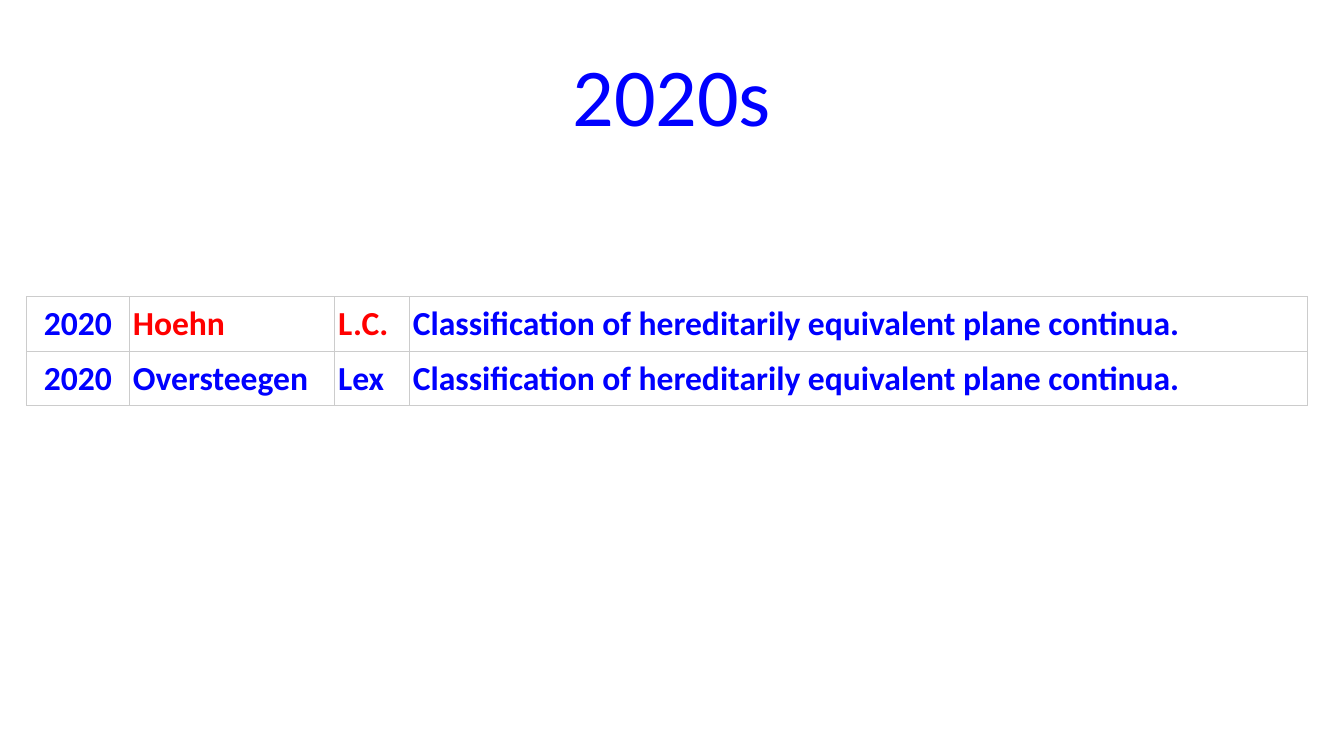
from lxml.etree import SubElement
from pptx import Presentation
from pptx.dml.color import RGBColor
from pptx.enum.text import MSO_ANCHOR as Anchor, PP_ALIGN as Align
from pptx.oxml.ns import qn
from pptx.util import Pt

BLUE = RGBColor(0x00, 0x00, 0xFF)
RED = RGBColor(0xFF, 0x00, 0x00)
BORDER = RGBColor(0xCC, 0xCC, 0xCC)
FONT = "Calibri"


def add_text(paragraph, text, size, color, bold, alignment):
    paragraph.alignment = alignment
    run = paragraph.add_run()
    run.text = text
    run.font.name = FONT
    run.font.size = Pt(size)
    run.font.bold = bold
    run.font.color.rgb = color


def add_borders(cell):
    properties = cell._tc.get_or_add_tcPr()
    for side in ("a:lnL", "a:lnR", "a:lnT", "a:lnB"):
        line = SubElement(properties, qn(side), w=str(Pt(0.6)))
        fill = SubElement(line, qn("a:solidFill"))
        SubElement(fill, qn("a:srgbClr"), val=str(BORDER))


presentation = Presentation()
presentation.slide_width = Pt(720)
presentation.slide_height = Pt(405)
slide = presentation.slides.add_slide(presentation.slide_layouts[5])

title = slide.shapes.title
title.left, title.top, title.width, title.height = Pt(36), Pt(16.25), Pt(648), Pt(67.5)
title.text_frame.vertical_anchor = Anchor.MIDDLE
add_text(title.text_frame.paragraphs[0], "2020s", 44, BLUE, False, Align.CENTER)

paper = "Classification of hereditarily equivalent plane continua."
authors = [
    ("Hoehn", "L.C.", RED),
    ("Oversteegen", "Lex", BLUE),
]
column_widths = [55, 110, 40, 481.5]
row_height = 29.2

table = slide.shapes.add_table(
    len(authors), len(column_widths), Pt(14.2), Pt(159),
    Pt(sum(column_widths)), Pt(row_height * len(authors)),
).table
table.first_row = False
table.horz_banding = False
for column, width in zip(table.columns, column_widths):
    column.width = Pt(width)

for row_index, (surname, given_name, name_color) in enumerate(authors):
    table.rows[row_index].height = Pt(row_height)
    entries = [
        ("2020", BLUE, Align.CENTER),
        (surname, name_color, Align.LEFT),
        (given_name, name_color, Align.LEFT),
        (paper, BLUE, Align.LEFT),
    ]
    for column_index, (text, color, alignment) in enumerate(entries):
        cell = table.cell(row_index, column_index)
        cell.margin_left = cell.margin_right = Pt(2)
        cell.margin_top = cell.margin_bottom = Pt(0)
        cell.vertical_anchor = Anchor.MIDDLE
        add_borders(cell)
        cell.fill.background()
        add_text(cell.text_frame.paragraphs[0], text, 18, color, True, alignment)

presentation.save("out.pptx")
